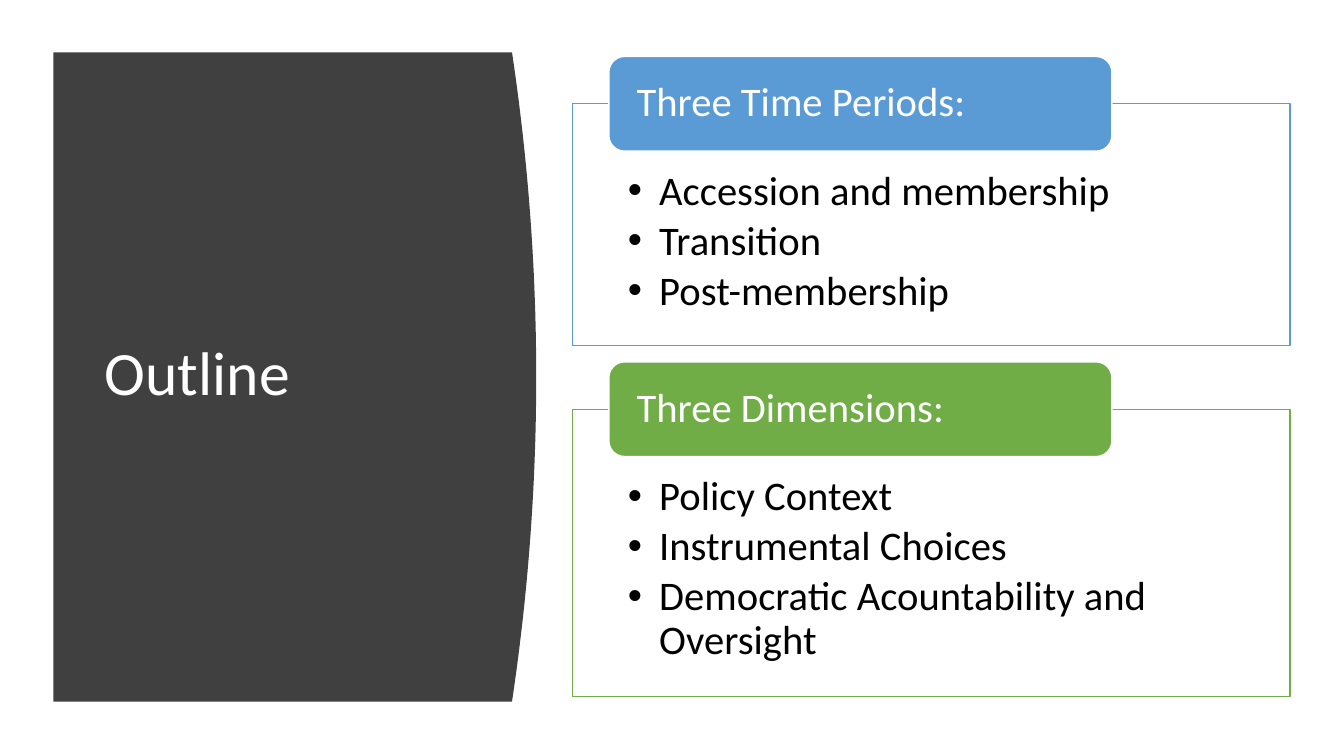
from lxml.etree import SubElement
from pptx import Presentation
from pptx.dml.color import RGBColor
from pptx.enum.shapes import MSO_SHAPE as Preset
from pptx.enum.text import MSO_ANCHOR as Anchor, PP_ALIGN as Align
from pptx.oxml.ns import qn
from pptx.util import Inches, Pt

WHITE, BLACK, CHARCOAL = "FFFFFF", "000000", "404040"
BLUE, GREEN = "5B9BD5", "70AD47"


def colour(hex_code):
    return RGBColor.from_string(hex_code)


class OutlineSlide:
    """Draws styled elements on one slide, placed in percent of its size."""

    font = "Calibri"
    title_size, body_size = 44, 29

    def __init__(self, deck):
        self.width, self.height = deck.slide_width, deck.slide_height
        self.slide = deck.slides.add_slide(deck.slide_layouts[5])
        self.shapes = self.slide.shapes

    def point(self, x, y):
        return round(self.width * x / 100), round(self.height * y / 100)

    def place(self, x, y, width, height):
        return *self.point(x, y), *self.point(width, height)

    def paint(self, shape, fill, line=None):
        shape.shadow.inherit = False
        shape.fill.solid()
        shape.fill.fore_color.rgb = colour(fill)
        if line:
            shape.line.color.rgb = colour(line)
            shape.line.width = Pt(1)
        else:
            shape.line.fill.background()

    def set_text(self, frame, lines, size, ink, insets, anchor, gap=0):
        frame.word_wrap = True
        frame.vertical_anchor = anchor
        (frame.margin_left, frame.margin_top,
         frame.margin_right, frame.margin_bottom) = map(Inches, insets)
        frame.text = "\n".join(lines)
        for paragraph in frame.paragraphs:
            paragraph.alignment = Align.LEFT
            paragraph.line_spacing = 0.9
            paragraph.space_after = Pt(gap)
            paragraph.font.name = self.font
            paragraph.font.size = Pt(size)
            paragraph.font.color.rgb = colour(ink)

    def title(self, text, *area):
        heading = self.shapes.title
        heading.left, heading.top, heading.width, heading.height = self.place(*area)
        self.set_text(heading.text_frame, [text], self.title_size, WHITE,
                      (0.1, 0.05, 0.1, 0.05), Anchor.MIDDLE)

    def curved_panel(self, left, top, right, bottom, bulge, steps=40):
        outline = self.shapes.build_freeform(*self.point(left, top))
        edge = []
        for step in range(steps + 1):
            share = step / steps
            edge.append(self.point(right + bulge * 4 * share * (1 - share),
                                   top + (bottom - top) * share))
        outline.add_line_segments([*edge, self.point(left, bottom)], close=True)
        panel = outline.convert_to_shape()
        self.paint(panel, CHARCOAL)
        self.shapes.title.element.addprevious(panel.element)

    def bullet_box(self, items, accent, *area):
        box = self.shapes.add_shape(Preset.RECTANGLE, *self.place(*area))
        self.paint(box, WHITE, accent)
        self.set_text(box.text_frame, items, self.body_size, BLACK,
                      (0.55, 0.66, 0.55, 0.23), Anchor.TOP, gap=4.35)
        for paragraph in box.text_frame.paragraphs:
            properties = paragraph._p.get_or_add_pPr()
            properties.set("marL", str(Inches(0.31)))
            properties.set("indent", str(-Inches(0.31)))
            SubElement(properties, qn("a:buFont")).set("typeface", "Arial")
            SubElement(properties, qn("a:buChar")).set("char", "•")
            properties.append(properties.find(qn("a:defRPr")))

    def label(self, text, accent, *area):
        tab = self.shapes.add_shape(Preset.ROUNDED_RECTANGLE, *self.place(*area))
        self.paint(tab, accent, WHITE)
        self.set_text(tab.text_frame, [text], self.body_size, WHITE,
                      (0.23, 0, 0.23, 0), Anchor.MIDDLE)


def main():
    deck = Presentation()
    deck.slide_width, deck.slide_height = Inches(13.33), Inches(7.5)
    outline = OutlineSlide(deck)
    outline.title("Outline", 7.05, 14.8, 28.05, 69.87)
    outline.curved_panel(3.98, 6.93, 38.1, 92.8, bulge=1.8)

    sections = [
        ("Three Time Periods:", BLUE, 32,
         ["Accession and membership", "Transition", "Post-membership"]),
        ("Three Dimensions:", GREEN, 38,
         ["Policy Context", "Instrumental Choices",
          "Democratic Acountability and Oversight"]),
    ]
    top, label_height, section_gap = 13.73, 12.53, 8.4
    for heading, accent, height, items in sections:
        outline.bullet_box(items, accent, 42.6, top, 53.4, height)
        outline.label(heading, accent, 45.3, top - label_height / 2, 37.43, label_height)
        top += height + section_gap
    deck.save("out.pptx")


if __name__ == "__main__":
    main()
